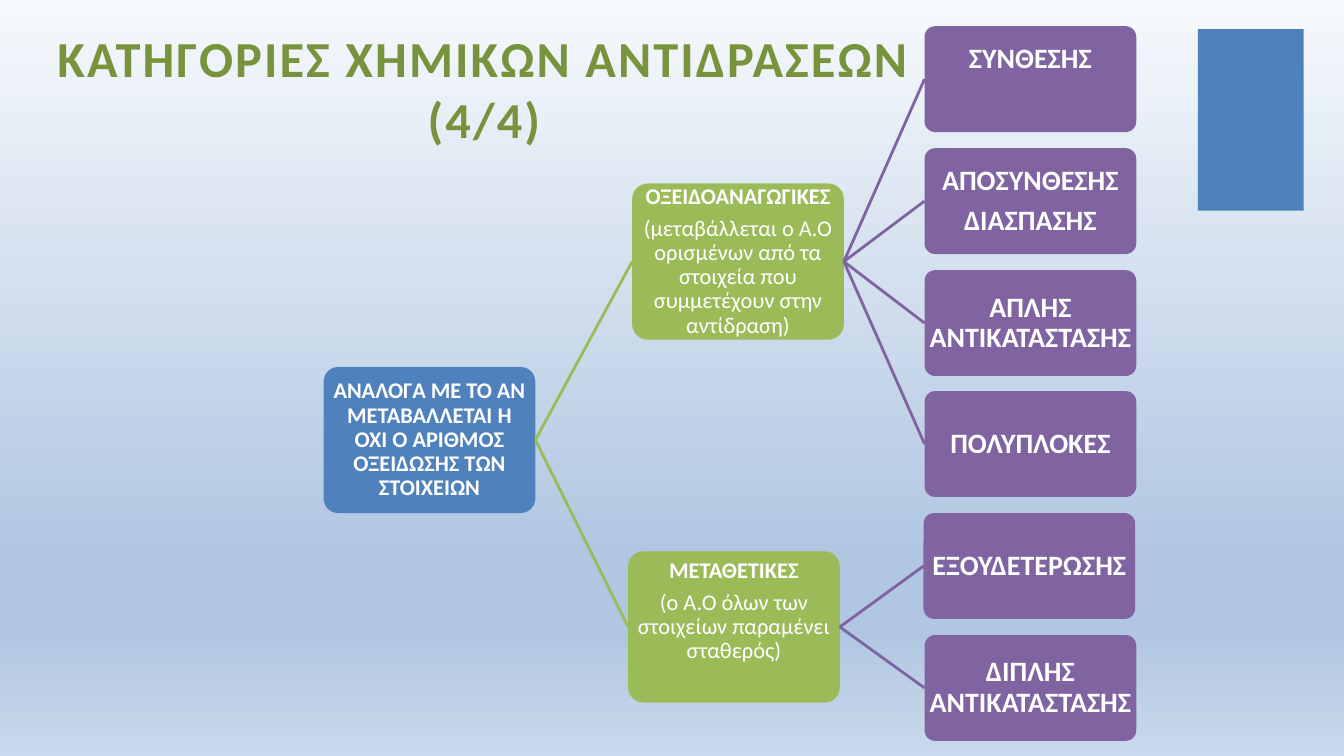
from dataclasses import dataclass

from lxml import etree
from pptx import Presentation
from pptx.dml.color import RGBColor
from pptx.enum.shapes import MSO_CONNECTOR, MSO_SHAPE
from pptx.enum.text import MSO_ANCHOR, MSO_AUTO_SIZE, PP_ALIGN
from pptx.oxml.ns import qn
from pptx.util import Pt

STRAIGHT = MSO_CONNECTOR.STRAIGHT
RECTANGLE, ROUNDED = MSO_SHAPE.RECTANGLE, MSO_SHAPE.ROUNDED_RECTANGLE
MIDDLE, BOTTOM = MSO_ANCHOR.MIDDLE, MSO_ANCHOR.BOTTOM
CENTER = PP_ALIGN.CENTER
NO_AUTOFIT = MSO_AUTO_SIZE.NONE
LEFT_SIDE, RIGHT_SIDE = 1, 3

EMU_PER_PX = 9144  # 100 px to the inch
TITLE_ONLY_LAYOUT = 5


@dataclass(frozen=True)
class Theme:
    font: str = "Calibri"
    title: str = "77933C"
    root: str = "4F81BD"
    branch: str = "9BBB59"
    leaf: str = "8064A2"
    text: str = "FFFFFF"
    background: tuple = ((0, "F6F9FC"), (74, "B0C6E1"), (83, "B0C6E1"), (100, "CAD9EB"))
    title_size: int = 36
    branch_size: int = 16
    leaf_size: int = 20
    line_width: int = 2


def px(length):
    return round(length * EMU_PER_PX)


def apply_format(target, values):
    for name, value in values.items():
        setattr(target, name, value)


class SlideBuilder:
    def __init__(self, presentation, theme):
        self.theme = theme
        self.slide = presentation.slides.add_slide(presentation.slide_layouts[TITLE_ONLY_LAYOUT])

    def background(self):
        fill = self.slide.background.fill
        fill.gradient()
        fill.gradient_angle = 270
        stops = next(self.slide.element.iter(qn("a:gsLst")))
        for stop in list(stops):
            stops.remove(stop)
        for percent, color in self.theme.background:
            stop = etree.SubElement(stops, qn("a:gs"), pos=str(percent * 1000))
            etree.SubElement(stop, qn("a:srgbClr"), val=color)

    def font(self, run, size, color, bold):
        apply_format(run.font, {"name": self.theme.font, "size": Pt(size), "bold": bold})
        run.font.color.rgb = RGBColor.from_string(color)

    def title(self, text, left, top, width, height):
        title = self.slide.shapes.title
        apply_format(title, {"left": px(left), "top": px(top), "width": px(width), "height": px(height)})
        apply_format(title.text_frame, {"word_wrap": True, "auto_size": NO_AUTOFIT,
                                        "vertical_anchor": BOTTOM})
        paragraph = title.text_frame.paragraphs[0]
        paragraph.alignment = CENTER
        run = paragraph.add_run()
        run.text = text
        self.font(run, self.theme.title_size, self.theme.title, True)
        run.font._element.set("spc", "150")

    def block(self, kind, color, left, top, width, height):
        shape = self.slide.shapes.add_shape(kind, px(left), px(top), px(width), px(height))
        shape.shadow.inherit = False
        shape.fill.solid()
        shape.fill.fore_color.rgb = RGBColor.from_string(color)
        shape.line.fill.background()
        return shape

    def node(self, lines, color, size, box, raise_by=0):
        """Rounded box; lines holds (text, bold) pairs, raise_by lifts the centred text."""
        shape = self.block(ROUNDED, color, *box)
        shape.adjustments[0] = 0.1
        frame = shape.text_frame
        apply_format(frame, {"word_wrap": True, "vertical_anchor": MIDDLE,
                             "margin_left": px(1), "margin_right": px(1),
                             "margin_top": px(1), "margin_bottom": px(1 + raise_by)})
        for index, (text, bold) in enumerate(lines):
            paragraph = frame.add_paragraph() if index else frame.paragraphs[0]
            apply_format(paragraph, {"alignment": CENTER, "line_spacing": 0.9,
                                     "space_after": Pt(size * 0.35)})
            run = paragraph.add_run()
            run.text = text
            self.font(run, size, self.theme.text, bold)
        return shape

    def link(self, parent, child, color):
        connector = self.slide.shapes.add_connector(STRAIGHT, 0, 0, 0, 0)
        connector.begin_connect(parent, RIGHT_SIDE)
        connector.end_connect(child, LEFT_SIDE)
        connector.line.color.rgb = RGBColor.from_string(color)
        connector.line.width = Pt(self.theme.line_width)
        etree.SubElement(connector._element.spPr, qn("a:effectLst"))


NODE_WIDTH = 210
LEAF_TOP, LEAF_PITCH, LEAF_HEIGHT = 26, 120.8, 105

ROOT = "ΑΝΑΛΟΓΑ ΜΕ ΤΟ ΑΝ ΜΕΤΑΒΑΛΛΕΤΑΙ Ή ΟΧΙ Ο ΑΡΙΘΜΟΣ ΟΞΕΙΔΩΣΗΣ ΤΩΝ ΣΤΟΙΧΕΙΩΝ"

# Branches: heading, note, box, text lift, leaves (lines, left, text lift)
BRANCHES = [
    ("ΟΞΕΙΔΟΑΝΑΓΩΓΙΚΕΣ",
     "(μεταβάλλεται ο Α.Ο ορισμένων από τα στοιχεία που συμμετέχουν στην αντίδραση)",
     (627, 182, NODE_WIDTH, 155), 0,
     [(["ΣΥΝΘΕΣΗΣ"], 917, 40),
      (["ΑΠΟΣΥΝΘΕΣΗΣ", "ΔΙΑΣΠΑΣΗΣ"], 917, 0),
      (["ΑΠΛΗΣ ΑΝΤΙΚΑΤΑΣΤΑΣΗΣ"], 917, 0),
      (["ΠΟΛΥΠΛΟΚΕΣ"], 917, 0)]),
    ("ΜΕΤΑΘΕΤΙΚΕΣ",
     "(ο Α.Ο όλων των στοιχείων παραμένει σταθερός)",
     (623, 547, NODE_WIDTH, 150), 31,
     [(["ΕΞΟΥΔΕΤΕΡΩΣΗΣ"], 916, 0),
      (["ΔΙΠΛΗΣ ΑΝΤΙΚΑΤΑΣΤΑΣΗΣ"], 917, 0)]),
]


def main():
    presentation = Presentation()
    apply_format(presentation, {"slide_width": px(1333), "slide_height": px(750)})
    theme = Theme()
    builder = SlideBuilder(presentation, theme)

    # Background, side block and title
    builder.background()
    builder.block(RECTANGLE, theme.root, 1188, 29, 105, 180)
    builder.title("ΚΑΤΗΓΟΡΙΕΣ ΧΗΜΙΚΩΝ ΑΝΤΙΔΡΑΣΕΩΝ (4/4)", 19, 70, 922, 82)

    # Tree: root, branches, leaves
    root = builder.node([(ROOT, True)], theme.root, theme.branch_size, (321, 364, NODE_WIDTH, 145))
    row = 0
    for heading, note, box, branch_lift, leaves in BRANCHES:
        branch = builder.node([(heading, True), (note, False)], theme.branch,
                              theme.branch_size, box, branch_lift)
        builder.link(root, branch, theme.branch)
        for lines, left, leaf_lift in leaves:
            leaf_box = (left, round(LEAF_TOP + row * LEAF_PITCH), NODE_WIDTH, LEAF_HEIGHT)
            leaf = builder.node([(line, True) for line in lines], theme.leaf,
                                theme.leaf_size, leaf_box, leaf_lift)
            builder.link(branch, leaf, theme.leaf)
            row += 1

    presentation.save("out.pptx")


if __name__ == "__main__":
    main()
